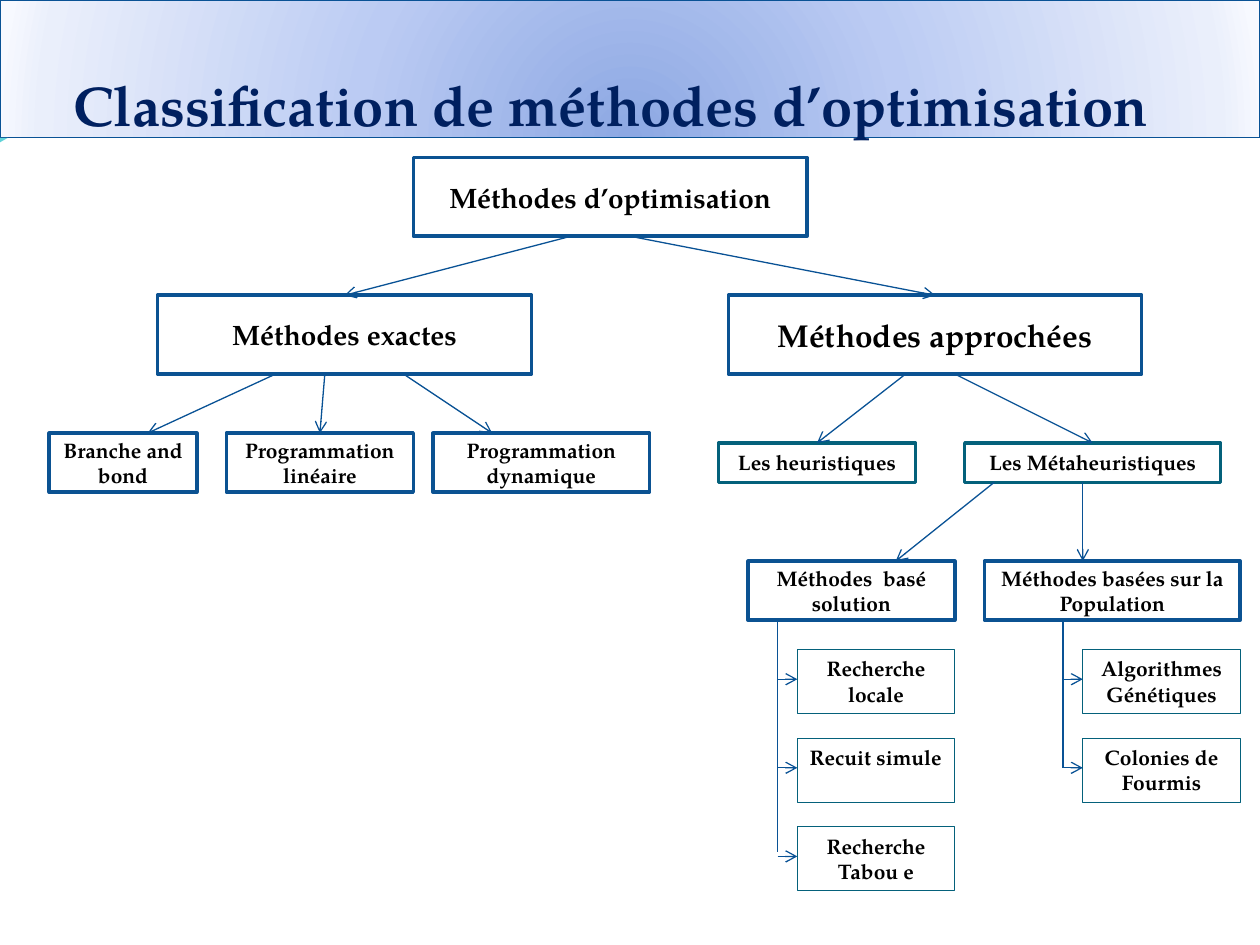
from dataclasses import dataclass

from lxml import etree
from pptx import Presentation
from pptx.dml.color import RGBColor
from pptx.enum import shapes, text
from pptx.oxml import parse_xml
from pptx.oxml.ns import nsdecls, qn
from pptx.util import Inches, Pt

COLS, ROWS = 64, 48
UNIT = Inches(10) / COLS  # the grid cell is square


@dataclass(frozen=True)
class Theme:
    font: str = "TeX Gyre Pagella"
    ink: str = "000000"
    navy: str = "002060"
    blue: str = "0B5292"
    link: str = "095295"
    teal: str = "04617B"
    wave: str = "5FD3D8"
    white: str = "FFFFFF"
    glow: tuple = ((0, "8DA8E3"), (43, "BBCBF3"), (93, "EAEFFB"), (100, "F7F9FF"))
    title: int = 32
    large: int = 18
    mid: int = 16
    small: int = 12
    thick: float = 2
    thin: float = 0.75


T = Theme()


def cell(n):
    return round(n * UNIT)


def rgb(code):
    return RGBColor.from_string(code)


def style(para, size, color):
    for run in para.runs:
        run.font.name, run.font.size, run.font.bold = T.font, Pt(size), True
        run.font.color.rgb = rgb(color)


def node(slide, box, label, size=T.small, line=T.blue, width=T.thick,
         top=False, align=text.PP_ALIGN.CENTER):
    """Labelled rectangle; box is left, top, width, height in grid cells."""
    rect = slide.shapes.add_shape(shapes.MSO_SHAPE.RECTANGLE, *map(cell, box))
    rect.shadow.inherit = False
    if top and width == T.thick:
        rect.fill.solid()
        rect.fill.fore_color.rgb = rgb(T.white)
    else:
        rect.fill.background()
    rect.line.color.rgb, rect.line.width = rgb(line), Pt(width)
    frame = rect.text_frame
    frame.text = label
    frame.word_wrap = True
    frame.vertical_anchor = text.MSO_ANCHOR.TOP if top else text.MSO_ANCHOR.MIDDLE
    para = frame.paragraphs[0]
    para.alignment = align
    style(para, size, T.ink)


def link(slide, start, end, arrow=True):
    line = slide.shapes.add_connector(
        shapes.MSO_CONNECTOR.STRAIGHT, *map(cell, (*start, *end)))
    line.line.color.rgb, line.line.width = rgb(T.link), Pt(T.thin)
    if arrow:
        etree.SubElement(line.line._get_or_add_ln(), qn("a:tailEnd"), type="arrow")
    etree.SubElement(line._element.spPr, qn("a:effectLst"))


def header(slide, box):
    x, y, w, h = box
    # Wave tip showing under the band
    pen = slide.shapes.build_freeform(cell(x), cell(y + h), scale=1.0)
    pen.add_line_segments([(cell(x + 0.4), cell(y + h)), (cell(x), cell(y + h + 0.23))])
    tip = pen.convert_to_shape()
    tip.shadow.inherit = False
    tip.fill.solid()
    tip.fill.fore_color.rgb = rgb(T.wave)
    tip.line.fill.background()

    # Title band with a radial glow
    band = slide.shapes.title
    band.left, band.top, band.width, band.height = map(cell, box)
    band.fill.solid()
    stops = "".join(f'<a:gs pos="{pos * 1000}"><a:srgbClr val="{code}"/></a:gs>'
                    for pos, code in T.glow)
    glow = parse_xml(
        f'<a:gradFill {nsdecls("a")} rotWithShape="1"><a:gsLst>{stops}</a:gsLst>'
        '<a:path path="circle"><a:fillToRect l="50000" t="130000" r="50000" b="-30000"/>'
        '</a:path></a:gradFill>')
    props = band._element.spPr
    props.replace(props.find(qn("a:solidFill")), glow)
    band.line.color.rgb, band.line.width = rgb(T.link), Pt(T.thin)

    frame = band.text_frame
    frame.text = "Classification de méthodes d’optimisation"
    frame.word_wrap, frame.auto_size = True, text.MSO_AUTO_SIZE.NONE
    frame.vertical_anchor = text.MSO_ANCHOR.BOTTOM
    frame.margin_left = frame.margin_right = frame.margin_bottom = 0
    frame.margin_top = Inches(0.05)
    para = frame.paragraphs[0]
    para.alignment, para.line_spacing = text.PP_ALIGN.LEFT, 1.5
    para._p.get_or_add_pPr().set("indent", str(Inches(0.58)))
    style(para, T.title, T.navy)


def root(slide, box):
    x, y, w, h = box
    node(slide, box, "Méthodes d’optimisation", T.mid)
    for start, end in ((8, -3.5), (11, 26.5)):
        link(slide, (x + start, y + h), (x + end, y + h + 3))


def exact(slide, box):
    x, y, w, h = box
    node(slide, (x + 5.5, y, 19, 4), "Méthodes exactes", T.mid)
    # Offset, width, label, arrow start, arrow end
    kids = ((0, 7.5, "Branche and bond", 11.5, 5),
            (9, 9.5, "Programmation linéaire", 14, 13.75),
            (19.5, 11, "Programmation dynamique", 18, 22.5))
    for dx, wide, label, start, end in kids:
        node(slide, (x + dx, y + h - 3, wide, 3), label)
        link(slide, (x + start, y + 4), (x + end, y + h - 3))


def approx(slide, box):
    x, y, w, h = box
    node(slide, (x + 0.5, y, 21, 4), "Méthodes approchées", T.large)
    kids = ((0, 10, "Les heuristiques", 9.5, 5),
            (12.5, 13, "Les Métaheuristiques", 12, 19))
    for dx, wide, label, start, end in kids:
        node(slide, (x + dx, y + h - 2, wide, 2), label, line=T.teal, top=True)
        link(slide, (x + start, y + 4), (x + end, y + h - 2))


def family(slide, box, label, trunk, tail, leaves):
    """Head box with a trunk that branches to a column of leaves."""
    x, y, w, h = box
    node(slide, (x, y, w, 3), label)
    link(slide, (x + trunk, y + 3), (x + trunk, y + tail), arrow=False)
    for i, leaf in enumerate(leaves):
        row = y + 4.5 * (i + 1)
        align = text.PP_ALIGN.LEFT if leaf == "Recuit simule" else text.PP_ALIGN.CENTER
        node(slide, (x + w - 8, row, 8, 3.25), leaf, line=T.teal, width=T.thin,
             top=True, align=align)
        link(slide, (x + trunk, row + 1.5), (x + w - 8, row + 1.5))


def metas(slide, box):
    x, y, w, h = box
    for start, end in ((12.5, 7.5), (17, 17)):
        link(slide, (x + start, y), (x + end, y + 4))
    family(slide, (x, y + 4, 10.5, h - 4), "Méthodes  basé solution", 1.5, 14.8,
           ("Recherche locale", "Recuit simule", "Recherche Tabou e"))
    family(slide, (x + 12, y + 4, 13, h - 4), "Méthodes basées sur la Population", 4, 10.5,
           ("Algorithmes Génétiques", "Colonies de Fourmis"))


def main():
    deck = Presentation()
    deck.slide_width, deck.slide_height = cell(COLS), cell(ROWS)
    slide = deck.slides.add_slide(deck.slide_layouts[5])
    header(slide, (0, 0, COLS, 7))
    root(slide, (21, 8, 20, 4))
    exact(slide, (2.5, 15, 30.5, 10))
    approx(slide, (36.5, 15, 25.5, 9.5))
    metas(slide, (38, 24.5, 25, 20.75))
    deck.save("out.pptx")


if __name__ == "__main__":
    main()
